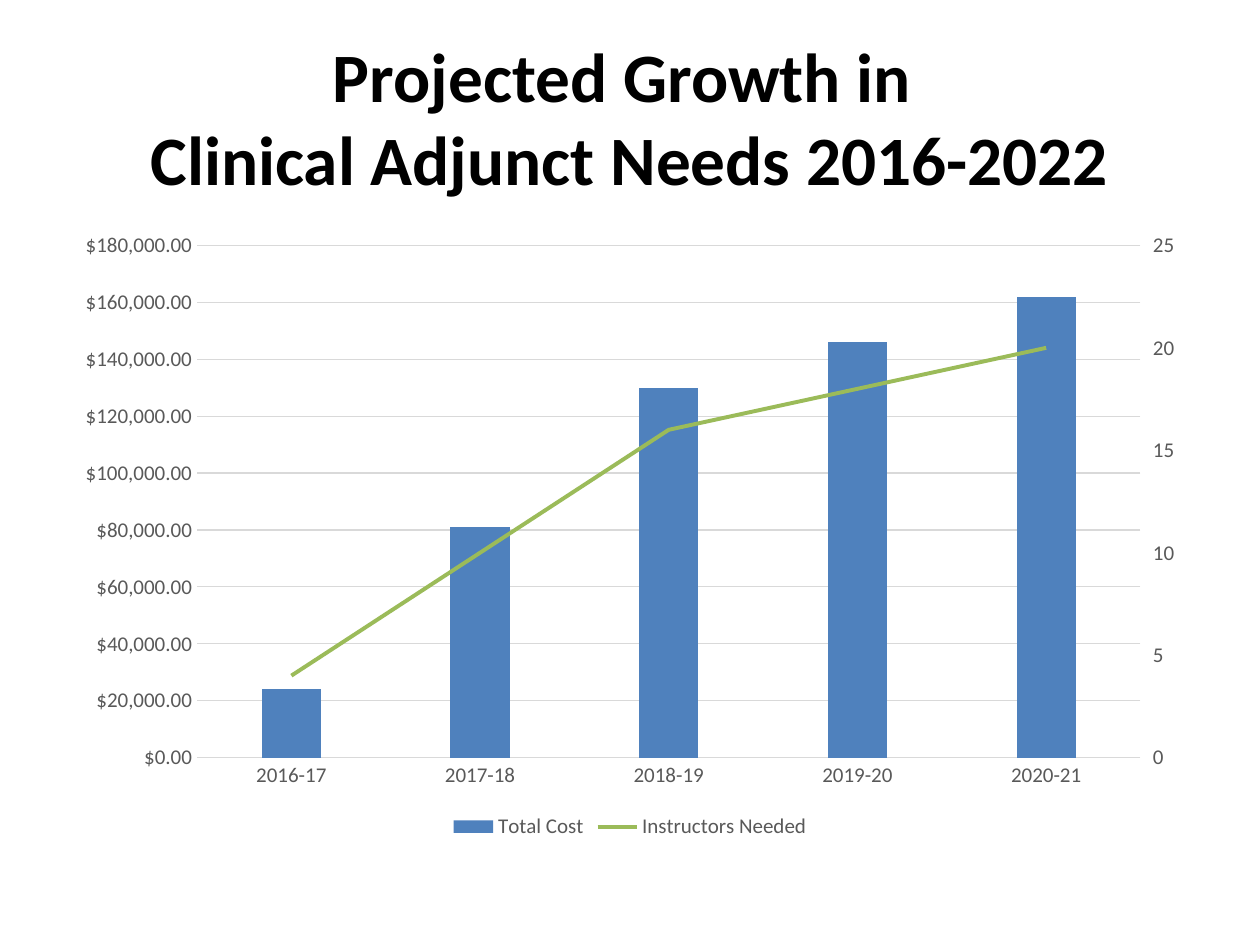
from copy import deepcopy

from lxml import etree
from pptx import Presentation
from pptx.chart.data import CategoryChartData
from pptx.dml.color import RGBColor
from pptx.enum import chart as ch, text
from pptx.oxml import ns
from pptx.util import Pt

TITLE = ["Projected Growth in ", "Clinical Adjunct Needs 2016-2022"]
YEARS = ["2016-17", "2017-18", "2018-19", "2019-20", "2020-21"]
COST = ("Total Cost", [24000, 81000, 130000, 146000, 162000])
INSTRUCTORS = ("Instructors Needed", [4, 10, 16, 18, 20])
BLUE, GREEN, GRAY, PALE = "4F81BD", "9BBB59", "595959", "D9D9D9"
FONT = "Calibri"
MARGIN, WIDTH = 36, 648


def color(value):
    return RGBColor.from_string(value)


def style_font(font, size, fill, bold=False):
    font.name, font.size, font.bold = FONT, Pt(size), bold
    font.color.rgb = color(fill)


def add_text(s, lines, left, top, width, height, size, fill, bold):
    tf = s.shapes.add_textbox(Pt(left), Pt(top), Pt(width), Pt(height)).text_frame
    tf.word_wrap = True
    tf.vertical_anchor = text.MSO_ANCHOR.MIDDLE
    p = tf.paragraphs[0]
    p.alignment = text.PP_ALIGN.CENTER
    for i, line in enumerate(lines):
        if i:
            p.add_line_break()
        r = p.add_run()
        r.text = line
        style_font(r.font, size, fill, bold)


def style_line(line, fill, width):
    line.color.rgb = color(fill)
    line.width = Pt(width)


def set_values(element, **values):
    for tag, value in values.items():
        element.find(".//" + ns.qn("c:" + tag)).set("val", str(value))


def move_to_second_axis(chart):
    plot_area = chart._chartSpace.chart.plotArea
    bars = plot_area.find(ns.qn("c:barChart"))
    ser = bars.findall(ns.qn("c:ser"))[1]
    for flag in ser.findall(ns.qn("c:invertIfNegative")):
        ser.remove(flag)
    lines = etree.Element(ns.qn("c:lineChart"))

    def add(parent, tag, value):
        child = etree.SubElement(parent, ns.qn("c:" + tag))
        child.set("val", str(value))

    add(lines, "grouping", "standard")
    add(lines, "varyColors", 0)
    lines.append(ser)
    marker = etree.Element(ns.qn("c:marker"))
    add(marker, "symbol", "none")
    ser.find(ns.qn("c:spPr")).addnext(marker)
    add(ser, "smooth", 0)
    add(lines, "marker", 1)
    cat_id, val_id = 5001, 5002
    add(lines, "axId", cat_id)
    add(lines, "axId", val_id)
    bars.addnext(lines)

    cat = deepcopy(chart.category_axis._element)
    val = deepcopy(chart.value_axis._element)
    set_values(cat, axId=cat_id, crossAx=val_id, delete=1)
    set_values(val, axId=val_id, crossAx=cat_id, axPos="r", crosses="max",
               majorTickMark="out", max=25, majorUnit=5)
    val.remove(val.find(ns.qn("c:majorGridlines")))
    val.find(ns.qn("c:numFmt")).set("formatCode", "General")
    chart.value_axis._element.addnext(val)
    val.addnext(cat)


def add_growth_chart(s, left, top, width, height):
    data = CategoryChartData()
    data.categories = YEARS
    for name, values in (COST, INSTRUCTORS):
        data.add_series(name, values)
    chart = s.shapes.add_chart(ch.XL_CHART_TYPE.COLUMN_CLUSTERED, Pt(left), Pt(top),
                               Pt(width), Pt(height), data).chart
    style_font(chart.font, 10, "000000")
    chart.has_title = False
    chart.has_legend = True
    chart.legend.position = ch.XL_LEGEND_POSITION.BOTTOM
    chart.legend.include_in_layout = False
    style_font(chart.legend.font, 12, GRAY)

    plot = chart.plots[0]
    plot.gap_width, plot.overlap, plot.vary_by_categories = 219, -27, False
    cost, instructors = plot.series
    cost.format.fill.solid()
    cost.format.fill.fore_color.rgb = color(BLUE)
    style_line(instructors.format.line, GREEN, 2.25)

    cat, val = chart.category_axis, chart.value_axis
    for axis in (cat, val):
        axis.major_tick_mark = axis.minor_tick_mark = ch.XL_TICK_MARK.NONE
        style_font(axis.tick_labels.font, 12, GRAY)
    style_line(cat.format.line, PALE, 0.75)
    val.format.line.fill.background()
    val.has_major_gridlines = True
    style_line(val.major_gridlines.format.line, PALE, 0.75)
    val.minimum_scale, val.maximum_scale, val.major_unit = 0, 180000, 20000
    val.tick_labels.number_format = '"$"#,##0.00'
    val.tick_labels.number_format_is_linked = False
    move_to_second_axis(chart)


def main():
    prs = Presentation()
    prs.slide_width, prs.slide_height = Pt(720), Pt(540)
    s = prs.slides.add_slide(prs.slide_layouts[6])
    add_text(s, TITLE, MARGIN, 21.6, WIDTH, 90, size=39.6, fill="000000", bold=True)
    add_growth_chart(s, MARGIN, 126, WIDTH, 356.4)
    prs.save("out.pptx")


if __name__ == "__main__":
    main()
